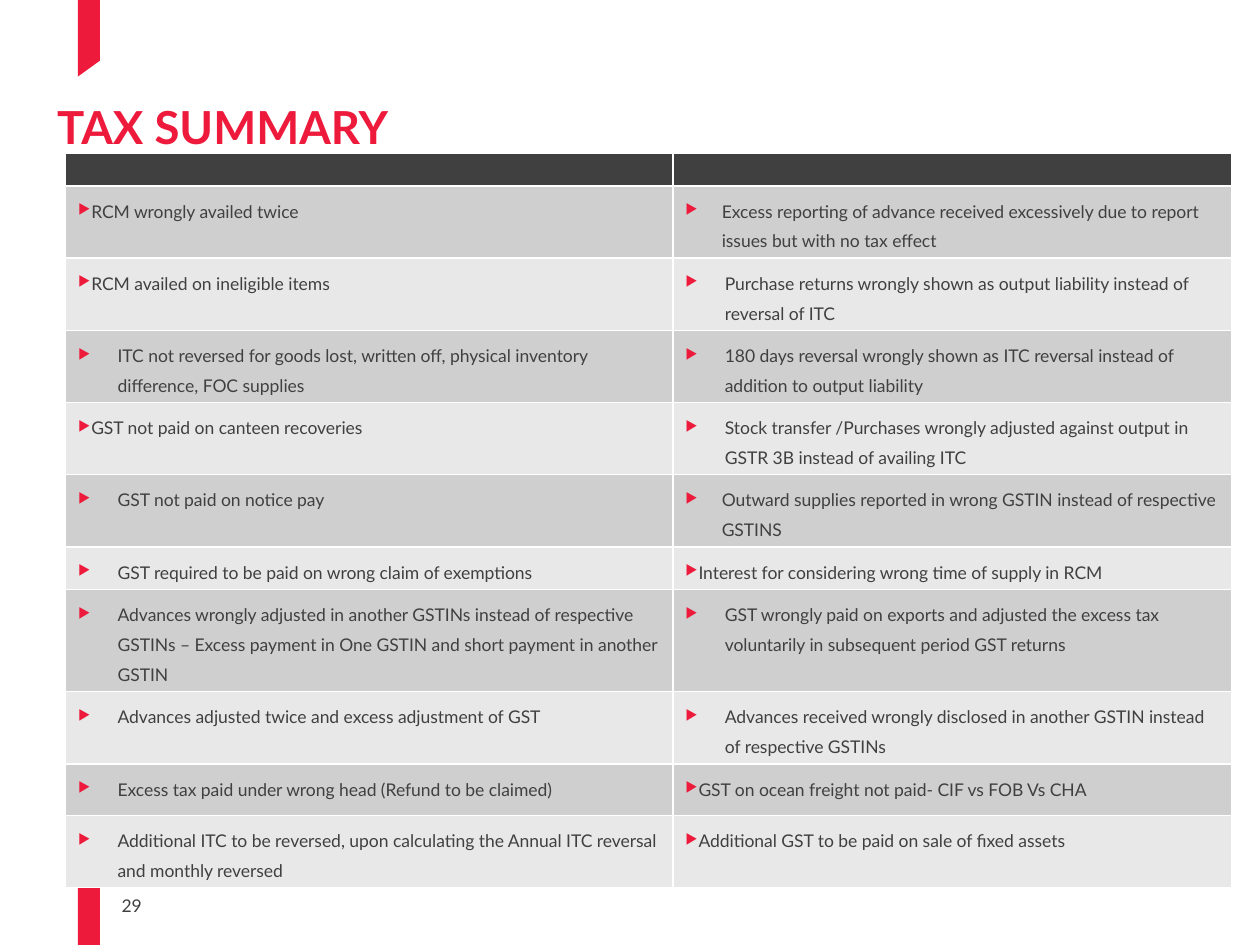
"""Build the tax summary slide with its two-column table of findings."""
from lxml.etree import SubElement
from pptx import Presentation
from pptx.dml.color import RGBColor
from pptx.enum.text import MSO_ANCHOR, MSO_AUTO_SIZE, PP_ALIGN
from pptx.oxml.ns import qn
from pptx.util import Pt

RED = RGBColor(0xED, 0x1A, 0x3B)
DARK = RGBColor(0x40, 0x40, 0x40)
BANDS = (RGBColor(0xCF, 0xCF, 0xCF), RGBColor(0xE8, 0xE8, 0xE8))
FONT = "Lato"
FLUSH, NARROW, WIDE = (0, -22.5), (20.75, -20.75), (22.5, -22.5)

ROWS = [
    (37.5, (FLUSH, "RCM wrongly availed twice"),
     (NARROW, "Excess reporting of advance received excessively due to report issues but with no tax effect")),
    (40, (FLUSH, "RCM availed on ineligible items"),
     (WIDE, "Purchase returns wrongly shown as output liability instead of reversal of ITC")),
    (40, (WIDE, "ITC not reversed for goods lost, written off, physical inventory difference, FOC supplies"),
     (WIDE, "180 days reversal wrongly shown as ITC reversal instead of addition to output liability")),
    (37, (FLUSH, "GST not paid on canteen recoveries"),
     (WIDE, "Stock transfer /Purchases wrongly adjusted against output in GSTR 3B instead of availing ITC")),
    (37, (WIDE, "GST not paid on notice pay"),
     (NARROW, "Outward supplies reported in wrong GSTIN instead of respective GSTINS")),
    (24.5, (WIDE, "GST required to be paid on wrong claim of exemptions"),
     (FLUSH, "Interest for considering wrong time of supply in RCM")),
    (37, (WIDE, "Advances wrongly adjusted in another GSTINs instead of respective GSTINs – "
                "Excess payment in One GSTIN and short payment in another GSTIN"),
     (WIDE, "GST wrongly paid on exports and adjusted the excess tax voluntarily in subsequent period GST returns")),
    (37.5, (WIDE, "Advances adjusted twice and excess adjustment of GST"),
     (WIDE, "Advances received wrongly disclosed in another GSTIN instead of respective GSTINs")),
    (29.5, (WIDE, "Excess tax paid under wrong head (Refund to be claimed)"),
     (FLUSH, "GST on ocean freight not paid- CIF vs FOB Vs CHA")),
    (37, (WIDE, "Additional ITC to be reversed, upon calculating the Annual ITC reversal and monthly reversed"),
     (FLUSH, "Additional GST to be paid on sale of fixed assets")),
]


class Deck:
    """Hold the style and the current slide."""

    def __init__(self):
        self.prs = Presentation()
        self.prs.slide_width, self.prs.slide_height = Pt(720), Pt(540)
        self.s = self.prs.slides.add_slide(self.prs.slide_layouts[5])

    def style(self, p, size, color, bold=False):
        for r in p.runs:
            r.font.name, r.font.size, r.font.bold = FONT, Pt(size), bold
            r.font.color.rgb = color

    def place(self, sp, left, top, width, height):
        sp.left, sp.top, sp.width, sp.height = Pt(left), Pt(top), Pt(width), Pt(height)

    def title(self, text, *box):
        sp = self.s.shapes.title
        self.place(sp, *box)
        tf = sp.text_frame
        tf.text = text
        tf.auto_size, tf.vertical_anchor = MSO_AUTO_SIZE.NONE, MSO_ANCHOR.TOP
        p = tf.paragraphs[0]
        p.alignment, p.line_spacing = PP_ALIGN.LEFT, 0.8
        self.style(p, 26, RED, True)

    def ribbon(self, points):
        points = [(Pt(x), Pt(y)) for x, y in points]
        fb = self.s.shapes.build_freeform(*points[0])
        fb.add_line_segments(points[1:], close=True)
        sp = fb.convert_to_shape()
        sp.shadow.inherit = False
        sp.fill.solid()
        sp.fill.fore_color.rgb = RED
        sp.line.fill.background()

    def page_number(self, text, *box):
        tf = self.s.shapes.add_textbox(*map(Pt, box)).text_frame
        tf.margin_left = tf.margin_right = tf.margin_top = tf.margin_bottom = 0
        tf.word_wrap, tf.vertical_anchor = True, MSO_ANCHOR.BOTTOM
        tf.text = text
        self.style(tf.paragraphs[0], 10, DARK)

    def fill_cell(self, cell, color):
        cell.fill.solid()
        cell.fill.fore_color.rgb = color

    def bullet(self, p, margin, indent):
        p.level = 2
        pPr = p._p.get_or_add_pPr()
        pPr.set("marL", str(Pt(margin)))
        pPr.set("indent", str(Pt(indent)))
        p.line_spacing, p.space_after = Pt(17), Pt(3)
        SubElement(SubElement(pPr, qn("a:buClr")), qn("a:srgbClr"), val=str(RED))
        SubElement(pPr, qn("a:buSzPct"), val="80000")
        SubElement(pPr, qn("a:buChar"), char="▶")

    def table(self, rows, left, top, widths, header):
        height = header + sum(row[0] for row in rows)
        frame = self.s.shapes.add_table(len(rows) + 1, len(widths), Pt(left), Pt(top),
                                        Pt(sum(widths)), Pt(height))
        tbl = frame.table
        for col, width in zip(tbl.columns, widths):
            col.width = Pt(width)
        tbl.rows[0].height = Pt(header)
        for cell in tbl.rows[0].cells:
            self.fill_cell(cell, DARK)
            SubElement(cell.text_frame.paragraphs[0]._p, qn("a:endParaRPr"), sz="800")
        for i, (row_height, *entries) in enumerate(rows):
            row = tbl.rows[i + 1]
            row.height = Pt(row_height)
            for cell, (indents, text) in zip(row.cells, entries):
                self.fill_cell(cell, BANDS[i % 2])
                cell.text_frame.text = text
                p = cell.text_frame.paragraphs[0]
                self.bullet(p, *indents)
                self.style(p, 10, DARK)


def main():
    deck = Deck()
    deck.ribbon([(44.5, 500), (44.5, 540), (57, 540), (57, 492)])
    deck.page_number("29", 69.5, 511, 32.5, 12.5)
    deck.ribbon([(57, 34.75), (57, 0), (44.5, 0), (44.5, 43.75)])
    deck.title("TAX SUMMARY", 25.5, 59, 666.5, 25.5)
    deck.table(ROWS, 37.5, 87.5, (347, 319.5), 18.75)
    deck.prs.save("out.pptx")


if __name__ == "__main__":
    main()
